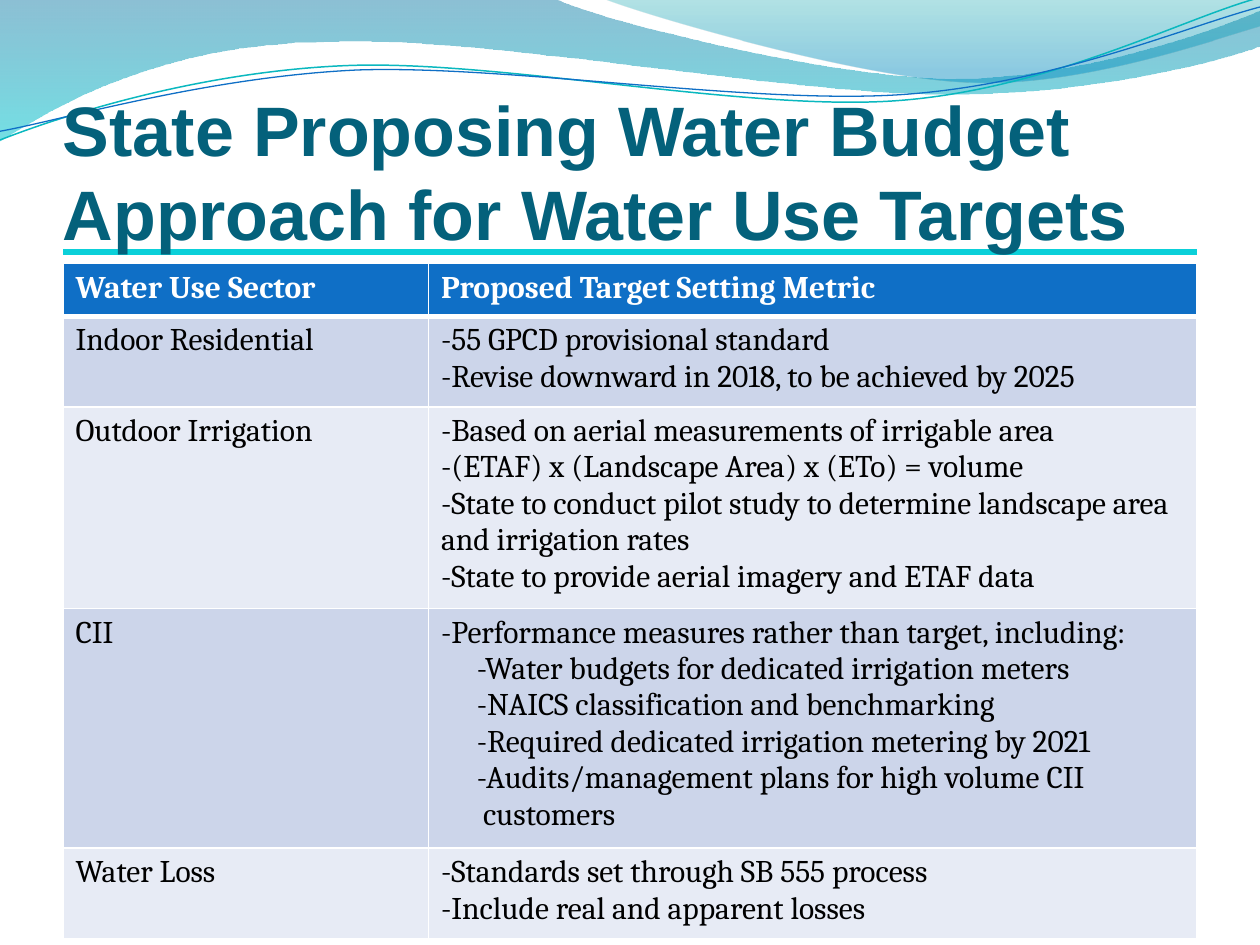
from lxml import etree
from pptx import Presentation
from pptx.dml.color import RGBColor
from pptx.enum.shapes import MSO_CONNECTOR
from pptx.enum.text import MSO_ANCHOR
from pptx.oxml.ns import qn
from pptx.util import Pt

TITLE = "State Proposing Water Budget Approach for Water Use Targets"
HEADER = ("Water Use Sector", "Proposed Target Setting Metric")
SUB, SUB_WRAP = 20.5, 24  # indents of second-level lines
# (sector, [(metric, indent)], row height)
SECTORS = [
    ("Indoor Residential",
     [("-55 GPCD provisional standard", 0),
      ("-Revise downward in 2018, to be achieved by 2025", 0)], 51.84),
    ("Outdoor Irrigation",
     [("-Based on aerial measurements of irrigable area", 0),
      ("-(ETAF) x (Landscape Area) x (ETo) = volume", 0),
      ("-State to conduct pilot study to determine landscape area and irrigation rates", 0),
      ("-State to provide aerial imagery and ETAF data", 0)], 74.16),
    ("CII",
     [("-Performance measures rather than target, including:", 0),
      ("-Water budgets for dedicated irrigation meters", SUB),
      ("-NAICS classification and benchmarking", SUB),
      ("-Required dedicated irrigation metering by 2021", SUB),
      ("-Audits/management plans for high volume CII", SUB),
      ("customers", SUB_WRAP)], 120.24),
    ("Water Loss",
     [("-Standards set through SB 555 process", 0),
      ("-Include real and apparent losses", 0)], 51.84),
]
HEADER_HEIGHT = 30.24
TABLE_HEIGHT = 385.92
COLUMNS = (208.8, 439.2)
LEFT, WIDTH = 36, 648
BANDS = ("CCD5EA", "E7EBF5")

# Outlines: a start point, then line ends (2 numbers) or Bezier curves (6 numbers).
# Gradient stops: position, colour, opacity in percent.
WAVES = [
    ([(0, -0.7), (317, -0.7), (343, 12, 478, 45, 546, 45), (614, 45, 690, 19, 720, 6),
      (720.7, 26), (708, 32, 626, 55, 537, 54), (446, 54, 275, 20, 185, 24),
      (93, 25, 33, 60, -0.7, 81)],
     [(0, "0074A1", 45), (1, "00C6CF", 55)]),
    ([(345, -0.7), (366, 8, 491, 45, 554, 47), (616, 50, 692, 23, 720, 15), (720, 0)],
     [(0, "00A1A9", 30), (0.8, "008BBF", 45)]),
]
RIPPLES = [
    ([(0, 80), (33, 67, 112, 41, 198, 37.5), (284.5, 34, 427, 64, 513, 57.5),
      (600, 51, 675, 11, 718.5, -1)], "0AB8BF", 0.85),
    ([(0, 75), (34, 69, 118, 44, 204, 40), (290, 37, 430, 60, 516, 54),
      (602, 48, 678, 15, 720, 4)], "0F6FC6", 0.75),
]


def color(value):
    return RGBColor.from_string(value)


def add_outline(s, outline, close):
    """Build a freeform through all points, then bend the six-number segments."""
    points = [(Pt(seg[k]), Pt(seg[k + 1]))
              for seg in outline for k in range(0, len(seg), 2)]
    builder = s.shapes.build_freeform(*points[0])
    builder.add_line_segments(points[1:], close=close)
    sp = builder.convert_to_shape()
    sp.shadow.inherit = False
    lines = iter(list(sp._element.spPr.iter(qn("a:lnTo"))))
    for seg in outline[1:]:
        first, *others = [next(lines) for _ in range(len(seg) // 2)]
        if others:
            curve = etree.Element(qn("a:cubicBezTo"))
            first.addprevious(curve)
            for line in (first, *others):
                curve.append(line[0])
                line.getparent().remove(line)
    return sp


def add_wave(s, outline, stops):
    sp = add_outline(s, outline, True)
    sp.line.fill.background()
    sp.fill.gradient()
    sp.fill.gradient_angle = 270
    for stop, (position, value, _) in zip(sp.fill.gradient_stops, stops):
        stop.position = position
        stop.color.rgb = color(value)
    for clr, (_, _, opacity) in zip(sp._element.spPr.iter(qn("a:srgbClr")), stops):
        etree.SubElement(clr, qn("a:alpha"), val=str(opacity * 1000))


def add_ripple(s, outline, value, width):
    sp = add_outline(s, outline, False)
    sp.fill.background()
    sp.line.color.rgb = color(value)
    sp.line.width = Pt(width)


def style(p, size, name, value, bold):
    p.font.size, p.font.name, p.font.bold = Pt(size), name, bold
    p.font.color.rgb = color(value)


def add_title(s):
    tf = s.shapes.add_textbox(Pt(LEFT), Pt(55.5), Pt(WIDTH), Pt(90)).text_frame
    tf.word_wrap = True
    tf.vertical_anchor = MSO_ANCHOR.BOTTOM
    tf.margin_left = tf.margin_right = tf.margin_bottom = 0
    p = tf.paragraphs[0]
    p.text = TITLE
    p.line_spacing = Pt(48)
    style(p, 40, "Arial", "04617B", True)


def add_rule(s):
    line = s.shapes.add_connector(
        MSO_CONNECTOR.STRAIGHT, Pt(LEFT), Pt(144), Pt(LEFT + WIDTH), Pt(144))
    line.line.color.rgb = color("0BD0D9")
    line.line.width = Pt(3)
    etree.SubElement(line._element.spPr, qn("a:effectLst"))


def set_borders(cell, top, bottom):
    tcPr = cell._tc.get_or_add_tcPr()
    for side, width in (("L", 1), ("R", 1), ("T", top), ("B", bottom)):
        ln = etree.SubElement(tcPr, qn(f"a:ln{side}"), w=str(Pt(width)))
        fill = etree.SubElement(ln, qn("a:solidFill"))
        etree.SubElement(fill, qn("a:srgbClr"), val="FFFFFF")


def fill_cell(cell, lines, row):
    header = row == 0
    set_borders(cell, 3 if row == 1 else 1, 3 if header else 1)
    cell.fill.solid()
    cell.fill.fore_color.rgb = color("0F6FC6" if header else BANDS[(row - 1) % 2])
    tf = cell.text_frame
    for i, (text, indent) in enumerate(lines):
        p = tf.add_paragraph() if i else tf.paragraphs[0]
        p.text = text
        if indent:
            p._p.get_or_add_pPr().set("marL", str(Pt(indent)))
        style(p, 18, "Cambria", "FFFFFF" if header else "000000", header)


def add_sector_table(s):
    rows = [(HEADER[0], [(HEADER[1], 0)], HEADER_HEIGHT)] + SECTORS
    frame = s.shapes.add_table(
        len(rows), 2, Pt(LEFT), Pt(150.5), Pt(WIDTH), Pt(TABLE_HEIGHT))
    table = frame.table
    for column, width in zip(table.columns, COLUMNS):
        column.width = Pt(width)
    for i, (sector, metrics, height) in enumerate(rows):
        table.rows[i].height = Pt(height)
        fill_cell(table.cell(i, 0), [(sector, 0)], i)
        fill_cell(table.cell(i, 1), metrics, i)
    frame.height = Pt(TABLE_HEIGHT)


def main():
    prs = Presentation()
    prs.slide_width, prs.slide_height = Pt(720), Pt(540)
    s = prs.slides.add_slide(prs.slide_layouts[6])
    for wave in WAVES:
        add_wave(s, *wave)
    for ripple in RIPPLES:
        add_ripple(s, *ripple)
    add_rule(s)
    add_title(s)
    add_sector_table(s)
    prs.save("out.pptx")


if __name__ == "__main__":
    main()
